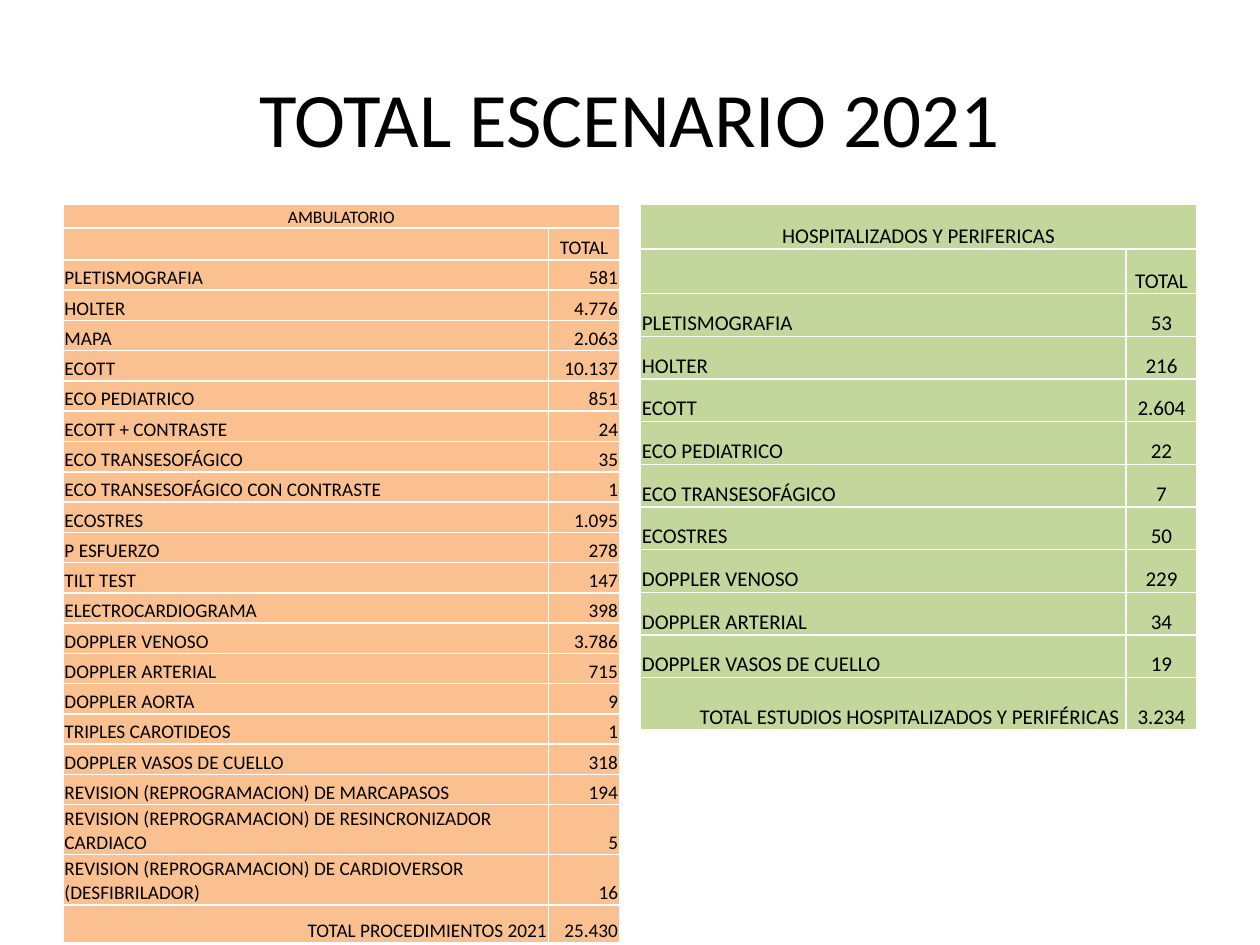
from dataclasses import dataclass

from lxml.etree import SubElement
from pptx import Presentation
from pptx.dml.color import RGBColor
from pptx.enum.text import MSO_ANCHOR, PP_ALIGN
from pptx.oxml.ns import qn
from pptx.slide import Slide
from pptx.table import _Cell
from pptx.util import Cm, Pt

COLORS = {
    "text": "000000",
    "border": "FFFFFF",
    "outpatient": "FAC090",
    "inpatient": "C3D69B",
}
FONT = "Calibri"
TABLE_TOP = 4.12
COLUMN_WIDTHS = (9.79, 1.43)
CELL_FORMAT = {
    "margin_left": Cm(0.03),
    "margin_right": Cm(0.03),
    "margin_top": Cm(0.03),
    "margin_bottom": Cm(0),
    "vertical_anchor": MSO_ANCHOR.BOTTOM,
}


@dataclass
class Study:
    name: str
    count: str
    height: float


@dataclass
class Scenario:
    heading: str
    left: float
    color: str
    heading_size: int
    body_size: int
    heading_height: float
    column_label_height: float
    count_align: PP_ALIGN
    studies: list[Study]
    total: Study


OUTPATIENT = Scenario(
    "AMBULATORIO", 1.27, "outpatient", 10, 11, 0.48, 0.64, PP_ALIGN.RIGHT,
    [Study(name, count, 0.61) for name, count in (
        ("PLETISMOGRAFIA", "581"),
        ("HOLTER", "4.776"),
        ("MAPA", "2.063"),
        ("ECOTT", "10.137"),
        ("ECO PEDIATRICO", "851"),
        ("ECOTT + CONTRASTE", "24"),
        ("ECO TRANSESOFÁGICO", "35"),
        ("ECO TRANSESOFÁGICO CON CONTRASTE", "1"),
        ("ECOSTRES", "1.095"),
        ("P ESFUERZO", "278"),
        ("TILT TEST", "147"),
        ("ELECTROCARDIOGRAMA", "398"),
        ("DOPPLER VENOSO", "3.786"),
        ("DOPPLER ARTERIAL", "715"),
        ("DOPPLER AORTA", "9"),
        ("TRIPLES CAROTIDEOS", "1"),
        ("DOPPLER VASOS DE CUELLO", "318"),
        ("REVISION (REPROGRAMACION) DE MARCAPASOS", "194"),
    )] + [
        Study("REVISION (REPROGRAMACION) DE RESINCRONIZADOR CARDIACO", "5", 1.01),
        Study("REVISION (REPROGRAMACION) DE CARDIOVERSOR (DESFIBRILADOR)", "16", 1.01),
    ],
    Study("TOTAL PROCEDIMIENTOS 2021", "25.430", 0.76),
)
INPATIENT = Scenario(
    "HOSPITALIZADOS Y PERIFERICAS", 12.91, "inpatient", 12, 12, 0.9, 0.9, PP_ALIGN.CENTER,
    [Study(name, count, 0.86) for name, count in (
        ("PLETISMOGRAFIA", "53"),
        ("HOLTER", "216"),
        ("ECOTT", "2.604"),
        ("ECO PEDIATRICO", "22"),
        ("ECO TRANSESOFÁGICO", "7"),
        ("ECOSTRES", "50"),
        ("DOPPLER VENOSO", "229"),
        ("DOPPLER ARTERIAL", "34"),
        ("DOPPLER VASOS DE CUELLO", "19"),
    )],
    Study("TOTAL ESTUDIOS HOSPITALIZADOS Y PERIFÉRICAS ", "3.234", 1.05),
)


def add_borders(cell: _Cell) -> None:
    properties = cell._tc.get_or_add_tcPr()
    for side in ("a:lnL", "a:lnR", "a:lnT", "a:lnB"):
        line = SubElement(properties, qn(side), w=str(Pt(1)))
        fill = SubElement(line, qn("a:solidFill"))
        SubElement(fill, qn("a:srgbClr"), val=COLORS["border"])


def fill_cell(cell: _Cell, text: str, size: int, align: PP_ALIGN, color: str) -> None:
    for attribute, value in CELL_FORMAT.items():
        setattr(cell, attribute, value)
    add_borders(cell)
    cell.fill.solid()
    cell.fill.fore_color.rgb = RGBColor.from_string(COLORS[color])
    paragraph = cell.text_frame.paragraphs[0]
    paragraph.alignment = align
    if not text:
        SubElement(paragraph._p, qn("a:endParaRPr"), sz=str(size * 100))
        return
    run = paragraph.add_run()
    run.text = text
    run.font.name = FONT
    run.font.size = Pt(size)
    run.font.color.rgb = RGBColor.from_string(COLORS["text"])


def add_scenario(slide: Slide, scenario: Scenario) -> None:
    center, left, right = PP_ALIGN.CENTER, PP_ALIGN.LEFT, PP_ALIGN.RIGHT
    rows = [
        Study(scenario.heading, "", scenario.heading_height),
        Study("", "TOTAL", scenario.column_label_height),
        *scenario.studies,
        scenario.total,
    ]
    aligns = [
        (center, center),
        (left, center),
        *[(left, scenario.count_align)] * len(scenario.studies),
        (right, scenario.count_align),
    ]
    sizes = [scenario.heading_size] + [scenario.body_size] * (len(rows) - 1)
    table = slide.shapes.add_table(
        len(rows), len(COLUMN_WIDTHS), Cm(scenario.left), Cm(TABLE_TOP),
        Cm(sum(COLUMN_WIDTHS)), Cm(sum(row.height for row in rows)),
    ).table
    table.first_row = False
    table.horz_banding = False
    for column, width in zip(table.columns, COLUMN_WIDTHS):
        column.width = Cm(width)
    for table_row, row, row_aligns, size in zip(table.rows, rows, aligns, sizes):
        table_row.height = Cm(row.height)
        for cell, text, align in zip(table_row.cells, (row.name, row.count), row_aligns):
            fill_cell(cell, text, size, align, scenario.color)
    table.cell(0, 0).merge(table.cell(0, 1))


def add_title(slide: Slide, text: str) -> None:
    title = slide.shapes.title
    frame = {"left": Cm(1.27), "top": Cm(0.76), "width": Cm(22.86), "height": Cm(3.18)}
    for attribute, value in frame.items():
        setattr(title, attribute, value)
    title.text_frame.text = text
    title.text_frame.vertical_anchor = MSO_ANCHOR.MIDDLE
    paragraph = title.text_frame.paragraphs[0]
    paragraph.alignment = PP_ALIGN.CENTER
    font = paragraph.runs[0].font
    font.name = FONT
    font.size = Pt(44)
    font.color.rgb = RGBColor.from_string(COLORS["text"])


def main() -> None:
    presentation = Presentation()
    presentation.slide_width = Cm(25.4)
    presentation.slide_height = Cm(19.05)
    slide = presentation.slides.add_slide(presentation.slide_layouts[5])
    add_title(slide, "TOTAL ESCENARIO 2021")
    for scenario in (OUTPATIENT, INPATIENT):
        add_scenario(slide, scenario)
    presentation.save("out.pptx")


if __name__ == "__main__":
    main()
